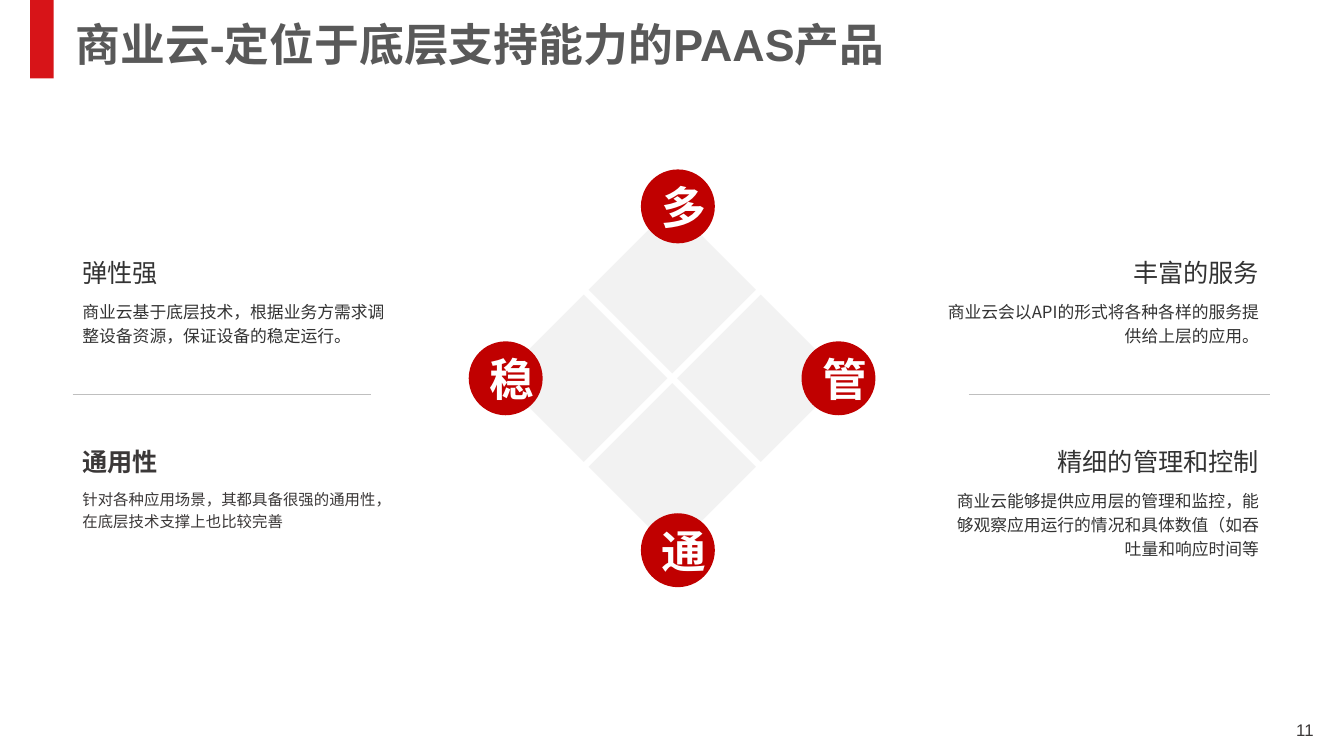
from lxml import etree
from pptx import Presentation
from pptx.dml.color import RGBColor
from pptx.enum import shapes, text
from pptx.oxml.ns import qn
from pptx.util import Pt

SANS = "Noto Sans CJK SC"
LEFT, CENTER, RIGHT = text.PP_ALIGN.LEFT, text.PP_ALIGN.CENTER, text.PP_ALIGN.RIGHT
TOP, MIDDLE, BOTTOM = text.MSO_ANCHOR.TOP, text.MSO_ANCHOR.MIDDLE, text.MSO_ANCHOR.BOTTOM


def color(value):
    """Turn a hex string into a colour."""
    return RGBColor.from_string(value)


def write(tf, content, size, fill, font="Arial", bold=False, align=LEFT, anchor=TOP, spacing=1.0):
    """Fill a text frame with one formatted paragraph."""
    tf.word_wrap = True
    tf.vertical_anchor = anchor
    p = tf.paragraphs[0]
    p.text = content
    p.alignment = align
    p.line_spacing = spacing
    p.font.size = Pt(size)
    p.font.bold = bold
    p.font.color.rgb = color(fill)
    p.font.name = font
    etree.SubElement(p._p.find(".//" + qn("a:defRPr")), qn("a:ea"), typeface=SANS)


def add_text(s, x, y, w, h, content, size, fill, **style):
    """Add a text box and return its frame."""
    tf = s.shapes.add_textbox(Pt(x), Pt(y), Pt(w), Pt(h)).text_frame
    write(tf, content, size, fill, **style)
    return tf


def add_block(s, kind, x, y, w, h, fill):
    """Add a filled shape without outline."""
    sp = s.shapes.add_shape(kind, Pt(x), Pt(y), Pt(w), Pt(h))
    sp.shadow.inherit = False
    sp.fill.solid()
    sp.fill.fore_color.rgb = color(fill)
    sp.line.fill.background()
    return sp


def add_rule(s, x1, x2, y):
    """Add a thin horizontal divider."""
    line = s.shapes.add_connector(shapes.MSO_CONNECTOR.STRAIGHT, Pt(x1), Pt(y), Pt(x2), Pt(y))
    line.line.color.rgb = color("BFBFBF")
    line.line.width = Pt(0.25)
    etree.SubElement(line._element.spPr, qn("a:effectLst"))


def add_feature(s, x, y, heading, body, align, fill="333333", font=SANS, bold=False, size=12):
    """Add a heading with its description below."""
    add_text(s, x, y, 237.6, 47.5, heading, 18, fill, font=font, bold=bold,
             align=align, anchor=BOTTOM)
    add_text(s, x, y + 47.5, 237.6, 41.8, body, size, fill, font=font,
             align=align, spacing=1.2)


def add_emblem(s):
    """Add the four diamonds and the lettered circles at their corners."""
    cx, cy, step, side, d = 480.2, 270.2, 63.2, 119.5, 52.8
    for dx, dy in ((0, -1), (0, 1), (-1, 0), (1, 0)):
        add_block(s, shapes.MSO_SHAPE.DIAMOND, cx + dx * step - side / 2,
                  cy + dy * step - side / 2, side, side, "F2F2F2")
    for letter, x, y in (("多", 484.2, 147.4), ("通", 484.2, 393),
                         ("稳", 361.2, 270.2), ("管", 598.9, 270.2)):
        sp = add_block(s, shapes.MSO_SHAPE.OVAL, x - d / 2, y - d / 2, d, d, "C00000")
        write(sp.text_frame, letter, 32, "FFFFFF", bold=True, align=CENTER, anchor=MIDDLE)


def main():
    """Build the slide and save it."""
    prs = Presentation()
    prs.slide_width, prs.slide_height = Pt(960), Pt(540)
    s = prs.slides.add_slide(prs.slide_layouts[6])
    add_block(s, shapes.MSO_SHAPE.RECTANGLE, 21.6, 0, 16.8, 56, "D71418")
    add_text(s, 729.4, 510.5, 216, 28.8, "11", 12, "3B3838", align=RIGHT)
    title = add_text(s, 46.8, 16.6, 828, 35.3, "商业云-定位于底层支持能力的PAAS产品",
                     32, "595959", bold=True, spacing=0.9)
    title.margin_top = title.margin_bottom = 0
    add_emblem(s)
    left, right, upper, lower = 51.8, 668.9, 161.3, 296.6
    add_feature(s, left, upper, "弹性强",
                "商业云基于底层技术，根据业务方需求调整设备资源，保证设备的稳定运行。", LEFT)
    add_feature(s, left, lower, "通用性",
                "针对各种应用场景，其都具备很强的通用性，在底层技术支撑上也比较完善",
                LEFT, fill="3B3838", font="Arial", bold=True, size=11)
    add_feature(s, right, upper, "丰富的服务",
                "商业云会以API的形式将各种各样的服务提供给上层的应用。", RIGHT)
    add_feature(s, right, lower, "精细的管理和控制",
                "商业云能够提供应用层的管理和监控，能够观察应用运行的情况和具体数值（如吞吐量和响应时间等", RIGHT)
    add_rule(s, left, 265, 281.5)
    add_rule(s, 692, 907.2, 281.5)
    prs.save("out.pptx")


if __name__ == "__main__":
    main()
